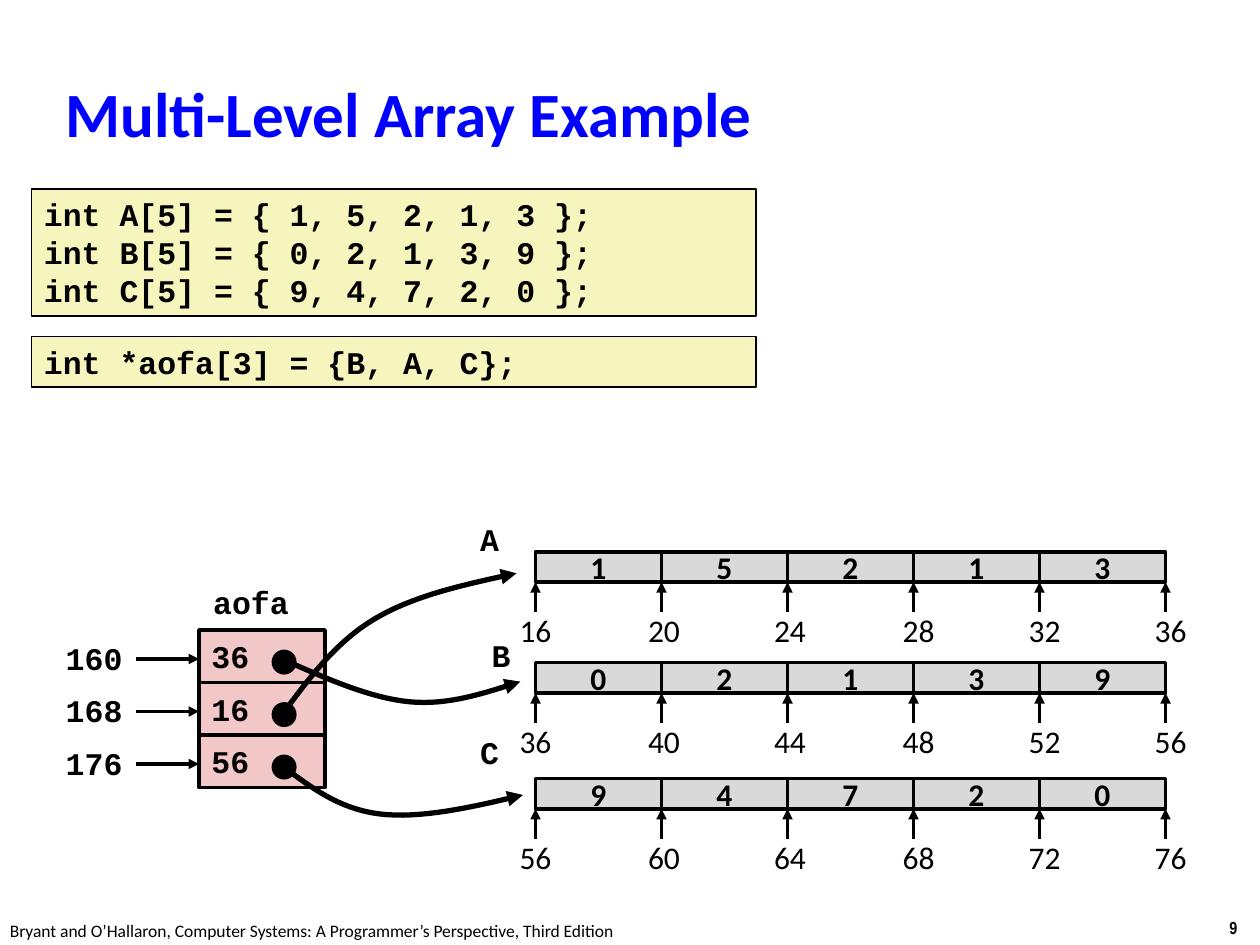
from lxml import etree
from pptx import Presentation
from pptx.dml.color import RGBColor
from pptx.enum.shapes import MSO_CONNECTOR, MSO_SHAPE
from pptx.enum.text import MSO_ANCHOR, PP_ALIGN
from pptx.oxml.ns import qn
from pptx.util import Inches, Pt

RECT, OVAL = MSO_SHAPE.RECTANGLE, MSO_SHAPE.OVAL
STRAIGHT = MSO_CONNECTOR.STRAIGHT
TOP, MIDDLE = MSO_ANCHOR.TOP, MSO_ANCHOR.MIDDLE
LEFT, CENTER, RIGHT = PP_ALIGN.LEFT, PP_ALIGN.CENTER, PP_ALIGN.RIGHT

BLACK, BLUE = "000000", "0000FF"
YELLOW, PINK, GRAY = "F6F5BD", "F1C7C7", "D9D9D9"
SANS, MONO, NARROW = "Calibri", "Courier New", "Arial Narrow"


def rgb(color):
    return RGBColor.from_string(color)


def write(s, text, font=MONO, size=18, bold=True, color=BLACK,
          align=LEFT, anchor=TOP, wrap=True):
    tf = s.text_frame
    tf.text = text
    tf.word_wrap = wrap
    tf.vertical_anchor = anchor
    for p in tf.paragraphs:
        p.alignment = align
        for r in p.runs:
            r.font.name = font
            r.font.size = Pt(size)
            r.font.bold = bold
            r.font.color.rgb = rgb(color)


def add_text(slide, x, y, w, h, text, **style):
    s = slide.shapes.add_textbox(Inches(x), Inches(y), Inches(w), Inches(h))
    write(s, text, **style)


def add_box(slide, kind, x, y, w, h, fill, line=2):
    s = slide.shapes.add_shape(kind, Inches(x), Inches(y), Inches(w), Inches(h))
    s.shadow.inherit = False
    s.fill.solid()
    s.fill.fore_color.rgb = rgb(fill)
    s.line.color.rgb = rgb(BLACK)
    s.line.width = Pt(line)
    return s


def style_arrow(s, width):
    s.line.color.rgb = rgb(BLACK)
    s.line.width = Pt(width)
    etree.SubElement(s.line._get_or_add_ln(), qn("a:tailEnd"), type="triangle")


def add_arrow(slide, x1, y1, x2, y2):
    s = slide.shapes.add_connector(STRAIGHT, Inches(x1), Inches(y1),
                                   Inches(x2), Inches(y2))
    style_arrow(s, 2)
    etree.SubElement(s._element.spPr, qn("a:effectLst"))


def bezier(p0, p1, p2, p3, steps=16):
    """Return points along a cubic curve, without its start."""
    points = []
    for i in range(1, steps + 1):
        t = i / steps
        u = 1 - t
        points.append(tuple(
            Inches(u**3 * a + 3 * u * u * t * b + 3 * u * t * t * c + t**3 * d)
            for a, b, c, d in zip(p0, p1, p2, p3)))
    return points


def add_curve(slide, knots):
    """Draw two joined cubic curves that end in an arrowhead."""
    builder = slide.shapes.build_freeform(*(Inches(v) for v in knots[0]))
    builder.add_line_segments(bezier(*knots[:4]) + bezier(*knots[3:]),
                              close=False)
    s = builder.convert_to_shape()
    s.shadow.inherit = False
    s.fill.background()
    style_arrow(s, 3)


def add_code(slide, x, y, w, h, lines):
    s = add_box(slide, RECT, x, y, w, h, YELLOW, line=1)
    write(s, "\n".join(lines))


def add_pointer_table(slide, x, y, name, rows):
    step = 1.25 / 3
    add_text(slide, x, y - 0.42, 0.81, 0.4, name, align=RIGHT, wrap=False)
    for i, (address, value) in enumerate(rows):
        top = y + i * step
        s = add_box(slide, RECT, x, top, 1, step, PINK)
        write(s, value, anchor=MIDDLE)
        add_arrow(slide, x - 0.5, top + 0.23, x, top + 0.23)
        add_text(slide, x - 1.16, top + 0.02, 0.65, 0.4, address,
                 align=RIGHT, wrap=False)
        add_box(slide, OVAL, x + 0.59, top + 0.17, 0.17, 0.17, BLACK)


def add_array(slide, x, y, values, start):
    """Draw a row of cells with the byte address under each cell border."""
    for i, value in enumerate(values):
        s = add_box(slide, RECT, x + i, y, 1, 0.24, GRAY)
        write(s, str(value), font=SANS, align=CENTER, anchor=MIDDLE)
    for i in range(len(values) + 1):
        border = x + i
        add_arrow(slide, border, y + 0.48, border, y + 0.24)
        nudge = min(0.02 * ((i + 1) // 2), 0.04)
        add_text(slide, border - 0.54 + nudge, y + 0.42, 1.08, 0.4,
                 str(start + 4 * i), font=SANS, bold=False, align=CENTER)


def add_footer(slide):
    add_text(slide, -0.02, 7.25, 5.08, 0.27,
             "Bryant and O’Hallaron, Computer Systems: "
             "A Programmer’s Perspective, Third Edition",
             font=SANS, size=10, bold=False, wrap=False)
    add_text(slide, 9.66, 7.23, 0.34, 0.27, "9", font=NARROW, size=10,
             wrap=False)


ARRAYS = [  # name, label position, row top, values, first address
    ("A", (3.71, 4.08), 4.38, (1, 5, 2, 1, 3), 16),
    ("B", (3.8, 5), 5.26, (0, 2, 1, 3, 9), 36),
    ("C", (3.71, 5.77), 6.18, (9, 4, 7, 2, 0), 56),
]
CURVES = [
    [(2.24, 5.67), (2.45, 5.39), (2.65, 5.11), (2.96, 4.92),
     (3.27, 4.73), (3.68, 4.64), (4.1, 4.55)],
    [(2.26, 5.24), (2.6, 5.39), (2.94, 5.54), (3.25, 5.57),
     (3.56, 5.6), (3.85, 5.5), (4.13, 5.41)],
    [(2.24, 6.08), (2.47, 6.25), (2.69, 6.42), (3.01, 6.46),
     (3.33, 6.5), (3.74, 6.41), (4.15, 6.31)],
]


def main():
    prs = Presentation()
    prs.slide_width, prs.slide_height = Inches(10), Inches(7.5)
    slide = prs.slides.add_slide(prs.slide_layouts[6])

    add_footer(slide)
    add_text(slide, 0.42, 0.58, 7.78, 0.63, "Multi-Level Array Example",
             font=SANS, size=36, color=BLUE, anchor=MIDDLE)
    add_code(slide, 0.25, 1.5, 5.75, 1.01, [
        f"int {name}[5] = {{ {', '.join(map(str, values))} }};"
        for name, _, _, values, _ in ARRAYS])
    add_code(slide, 0.25, 2.67, 5.75, 0.4, ["int *aofa[3] = {B, A, C};"])
    add_pointer_table(slide, 1.58, 5, "aofa",
                      [("160", "36"), ("168", "16"), ("176", "56")])
    for name, (x, y), top, values, start in ARRAYS:
        add_text(slide, x, y, 0.35, 0.4, name, align=RIGHT, wrap=False)
        add_array(slide, 4.25, top, values, start)
    for knots in CURVES:
        add_curve(slide, knots)

    prs.save("out.pptx")


if __name__ == "__main__":
    main()
